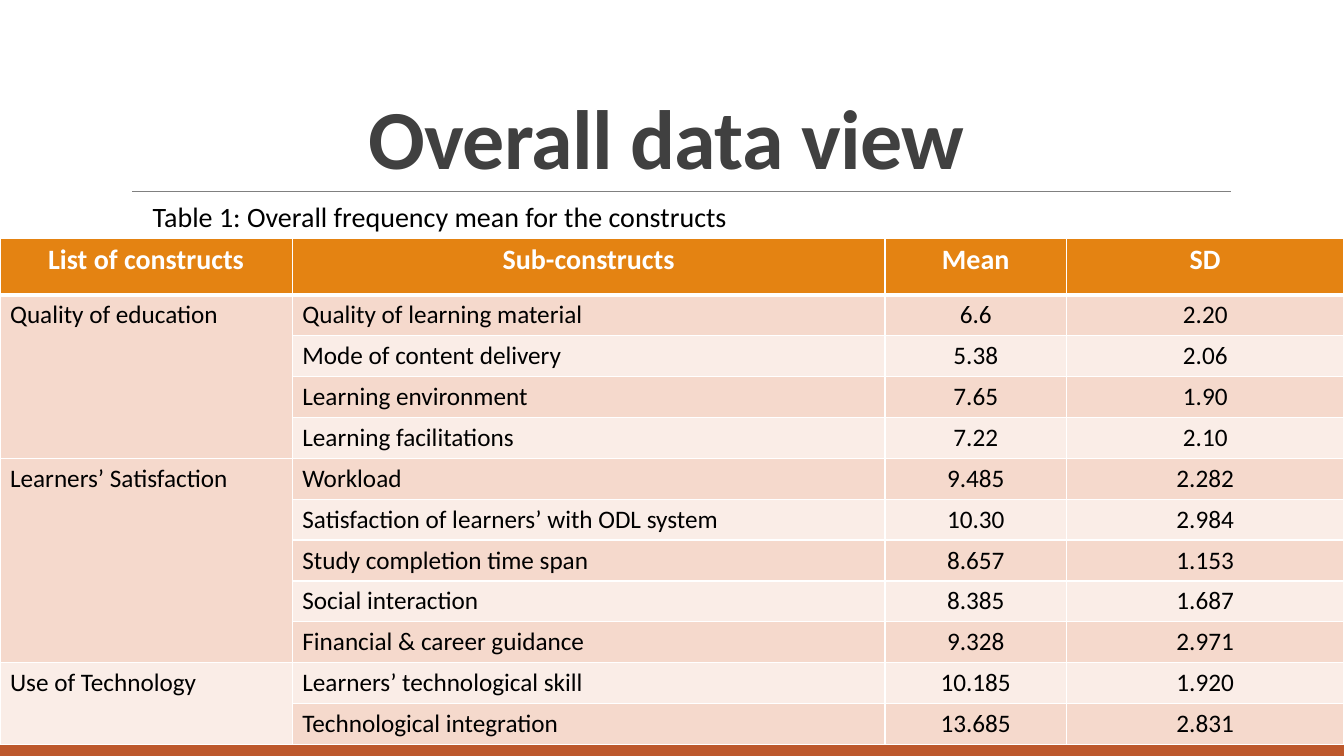
from itertools import accumulate

from lxml.etree import SubElement
from pptx import Presentation
from pptx.dml.color import RGBColor
from pptx.enum.shapes import MSO_CONNECTOR, MSO_SHAPE
from pptx.enum.text import MSO_ANCHOR, MSO_AUTO_SIZE, PP_ALIGN
from pptx.oxml.ns import qn
from pptx.util import Pt

COLORS = {
    "orange": "E48312", "rust": "BD582C", "rule": "808080", "title": "404040",
    "text": "000000", "white": "FFFFFF", "band": "F5D9CC", "light": "FAEDE7",
}
HEADINGS = ["List of constructs", "Sub-constructs", "Mean", "SD"]
CONSTRUCTS = {
    "Quality of education": [
        ("Quality of learning material", "6.6", "2.20"),
        ("Mode of content delivery", "5.38", "2.06"),
        ("Learning environment", "7.65", "1.90"),
        ("Learning facilitations", "7.22", "2.10"),
    ],
    "Learners’ Satisfaction": [
        ("Workload", "9.485", "2.282"),
        ("Satisfaction of learners’ with ODL system", "10.30", "2.984"),
        ("Study completion time span", "8.657", "1.153"),
        ("Social interaction", "8.385", "1.687"),
        ("Financial & career guidance", "9.328", "2.971"),
    ],
    "Use of Technology": [
        ("Learners’ technological skill", "10.185", "1.920"),
        ("Technological integration", "13.685", "2.831"),
    ],
}
COLUMN_WIDTHS = [208.8, 423.4, 129.6, 198.2]
HEADER_HEIGHT, ROW_HEIGHT = 40.6, 29.16


def color(name):
    """Return the named colour."""
    return RGBColor.from_string(COLORS[name])


def style_text(frame, size, tint, bold=False, align=PP_ALIGN.LEFT):
    """Format every paragraph and run of a text frame."""
    for para in frame.paragraphs:
        para.alignment = align
        for span in para.runs:
            span.font.name = "Calibri"
            span.font.size = Pt(size)
            span.font.bold = bold
            span.font.color.rgb = color(tint)


def add_footer_bars(slide, left, top, width, height):
    """Draw the thin orange strip above the rust bar."""
    strip = 5
    for tint, y, tall in [("rust", top + strip, height - strip), ("orange", top, strip)]:
        bar = slide.shapes.add_shape(
            MSO_SHAPE.RECTANGLE, Pt(left), Pt(y), Pt(width), Pt(tall))
        bar.shadow.inherit = False
        bar.fill.solid()
        bar.fill.fore_color.rgb = color(tint)
        bar.line.fill.background()


def add_heading(slide, left, top, width, height):
    """Place the title and the rule under it."""
    title = slide.shapes.title
    title.left, title.top, title.width, title.height = map(Pt, (left, top, width, height))
    frame = title.text_frame
    frame.text = "Overall data view "
    frame.word_wrap = True
    frame.auto_size = MSO_AUTO_SIZE.NONE
    frame.vertical_anchor = MSO_ANCHOR.BOTTOM
    style_text(frame, 60, "title", True, PP_ALIGN.CENTER)
    para = frame.paragraphs[0]
    para.line_spacing = 0.85
    para.runs[0].font._element.set("spc", "-50")
    base = Pt(top + height)
    rule = slide.shapes.add_connector(
        MSO_CONNECTOR.STRAIGHT, Pt(left + 8), base, Pt(left + width + 0.7), base)
    rule.line.color.rgb = color("rule")
    rule.line.width = Pt(0.5)
    SubElement(rule._element.spPr, qn("a:effectLst"))


def add_caption(slide, left, top, width, height):
    """Place the table caption."""
    box = slide.shapes.add_textbox(Pt(left), Pt(top), Pt(width), Pt(height))
    frame = box.text_frame
    frame.word_wrap = True
    frame.text = "Table 1: Overall frequency mean for the constructs"
    style_text(frame, 20, "text")


def set_borders(cell, top, bottom):
    """Give a cell white borders with the given top and bottom widths."""
    properties = cell._tc.get_or_add_tcPr()
    for side, width in [("L", 1), ("R", 1), ("T", top), ("B", bottom)]:
        border = SubElement(properties, qn(f"a:ln{side}"), w=str(Pt(width)))
        fill = SubElement(border, qn("a:solidFill"))
        SubElement(fill, qn("a:srgbClr"), val=COLORS["white"])


def add_construct_table(slide, left, top, width):
    """Build the table of means, merging the rows of each construct."""
    sizes = [len(entries) for entries in CONSTRUCTS.values()]
    rows = [HEADINGS] + [
        ("" if index else name, *entry)
        for name, entries in CONSTRUCTS.items()
        for index, entry in enumerate(entries)
    ]
    height = HEADER_HEIGHT + ROW_HEIGHT * sum(sizes)
    table = slide.shapes.add_table(
        len(rows), len(HEADINGS), Pt(left), Pt(top), Pt(width), Pt(height)).table
    for column, column_width in zip(table.columns, COLUMN_WIDTHS):
        column.width = Pt(column_width)
    for r, values in enumerate(rows):
        header = r == 0
        table.rows[r].height = Pt(HEADER_HEIGHT if header else ROW_HEIGHT)
        for c, value in enumerate(values):
            cell = table.cell(r, c)
            cell.text = value
            centered = header or c > 1
            style_text(cell.text_frame, 20 if header else 18,
                       "white" if header else "text", header,
                       PP_ALIGN.CENTER if centered else PP_ALIGN.LEFT)
            set_borders(cell, 3 if r == 1 else 1, 3 if header else 1)
            cell.fill.solid()
            cell.fill.fore_color.rgb = color(
                "orange" if header else "band" if r % 2 else "light")
    for last, size in zip(accumulate(sizes), sizes):
        table.cell(last - size + 1, 0).merge(table.cell(last, 0))


def main():
    """Build and save the deck."""
    deck = Presentation()
    deck.slide_width, deck.slide_height = Pt(960), Pt(540)
    slide = deck.slides.add_slide(deck.slide_layouts[5])
    add_footer_bars(slide, 0, 499, 960, 41)
    add_heading(slide, 86.4, 22.6, 792, 114.2)
    add_construct_table(slide, 0, 170, 960)
    add_caption(slide, 102, 139, 776, 31.5)
    deck.save("out.pptx")


if __name__ == "__main__":
    main()
